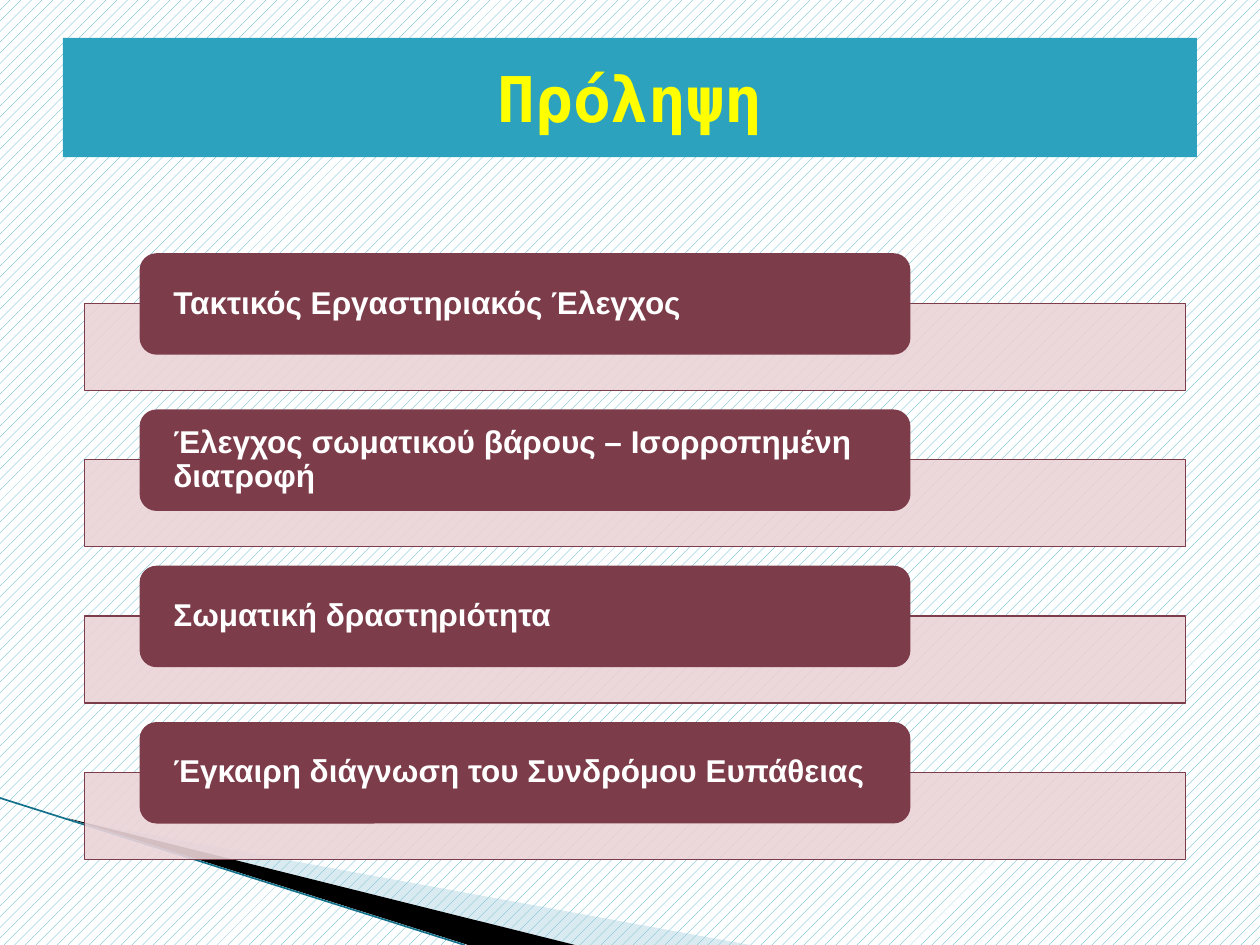
from lxml.etree import SubElement
from pptx import Presentation
from pptx.dml.color import RGBColor
from pptx.enum.dml import MSO_PATTERN
from pptx.enum.shapes import MSO_CONNECTOR, MSO_SHAPE
from pptx.enum.text import MSO_ANCHOR, PP_ALIGN
from pptx.oxml.ns import qn
from pptx.util import Pt

TEAL = RGBColor(0x2D, 0xA2, 0xBF)
DARK_TEAL = RGBColor(0x12, 0x70, 0x8A)
PALE_BLUE = RGBColor(0xA0, 0xCB, 0xDC)
WINE = RGBColor(0x7D, 0x3C, 0x4A)
PINK = RGBColor(0xEA, 0xD3, 0xD8)
YELLOW = RGBColor(0xFF, 0xFF, 0x00)
WHITE = RGBColor(0xFF, 0xFF, 0xFF)
BLACK = RGBColor(0, 0, 0)

TITLE_FONT = {"name": "DejaVu Sans Mono", "size": Pt(36), "bold": True}
LABEL_FONT = {"name": "Arial", "size": Pt(18), "bold": True}

MEASURES = [
    "Τακτικός Εργαστηριακός Έλεγχος",
    "Έλεγχος σωματικού βάρους – Ισορροπημένη διατροφή",
    "Σωματική δραστηριότητα",
    "Έγκαιρη διάγνωση του Συνδρόμου Ευπάθειας",
]
FIRST_TOP, STEP = 144.7, 89.3
BAR_DROP = 28.8


class Deck:
    """Slide under construction, with one method per kind of element."""

    def __init__(self, prs):
        self.s = prs.slides.add_slide(prs.slide_layouts[6])

    def background(self, fore, back):
        fill = self.s.background.fill
        fill.patterned()
        fill.pattern = MSO_PATTERN.PERCENT_20
        fill.fore_color.rgb, fill.back_color.rgb = fore, back

    def paint(self, sp, color, opacity=100, outline=None):
        sp.shadow.inherit = False
        sp.fill.solid()
        sp.fill.fore_color.rgb = color
        if opacity < 100:
            clr = sp._element.spPr.find(qn("a:solidFill")).find(qn("a:srgbClr"))
            SubElement(clr, qn("a:alpha"), val=str(opacity * 1000))
        if outline is None:
            sp.line.fill.background()
        else:
            sp.line.color.rgb = outline
            sp.line.width = Pt(0.75)

    def box(self, kind, left, top, width, height, color, **look):
        sp = self.s.shapes.add_shape(kind, Pt(left), Pt(top), Pt(width), Pt(height))
        self.paint(sp, color, **look)
        return sp

    def wedge(self, points, color, **look):
        start, *rest = [(Pt(x), Pt(y)) for x, y in points]
        builder = self.s.shapes.build_freeform(*start)
        builder.add_line_segments(rest)
        self.paint(builder.convert_to_shape(), color, **look)

    def line(self, x1, y1, x2, y2, color, width):
        cxn = self.s.shapes.add_connector(
            MSO_CONNECTOR.STRAIGHT, Pt(x1), Pt(y1), Pt(x2), Pt(y2))
        cxn.line.color.rgb = color
        cxn.line.width = Pt(width)
        SubElement(cxn._element.spPr, qn("a:effectLst"))

    def text(self, sp, words, font, color, align, frame):
        """Fill a shape with one paragraph; frame holds text frame settings."""
        tf = sp.text_frame
        tf.word_wrap = True
        tf.vertical_anchor = MSO_ANCHOR.MIDDLE
        for name, value in frame.items():
            setattr(tf, name, value)
        p = tf.paragraphs[0]
        p.alignment = align
        r = p.add_run()
        r.text = words
        for name, value in font.items():
            setattr(r.font, name, value)
        r.font.color.rgb = color
        return p


def main():
    prs = Presentation()
    prs.slide_width, prs.slide_height = Pt(720), Pt(540)
    deck = Deck(prs)
    deck.background(TEAL, WHITE)

    deck.wedge([(39.6, 468.5), (428.5, 540), (328.5, 540)], PALE_BLUE, opacity=40)
    deck.wedge([(38.2, 467.5), (328.5, 540), (267.5, 540)], BLACK)
    deck.line(0, 456, 265.5, 540, DARK_TEAL, 0.95)

    label_frame = {"margin_left": Pt(16.5), "margin_right": Pt(16.5),
                   "margin_top": 0, "margin_bottom": 0}
    for i, measure in enumerate(MEASURES):
        top = FIRST_TOP + i * STEP
        deck.box(MSO_SHAPE.RECTANGLE, 48.3, top + BAR_DROP, 629.2, 49.6,
                 PINK, opacity=90, outline=WINE)
        label = deck.box(MSO_SHAPE.ROUNDED_RECTANGLE, 79.8, top, 440.5, 58, WINE)
        p = deck.text(label, measure, LABEL_FONT, WHITE, PP_ALIGN.LEFT, label_frame)
        p.line_spacing = 0.9

    title = deck.box(MSO_SHAPE.RECTANGLE, 36, 21.6, 648, 68.2, TEAL)
    deck.text(title, "Πρόληψη", TITLE_FONT, YELLOW, PP_ALIGN.CENTER, {})
    prs.save("out.pptx")


if __name__ == "__main__":
    main()
